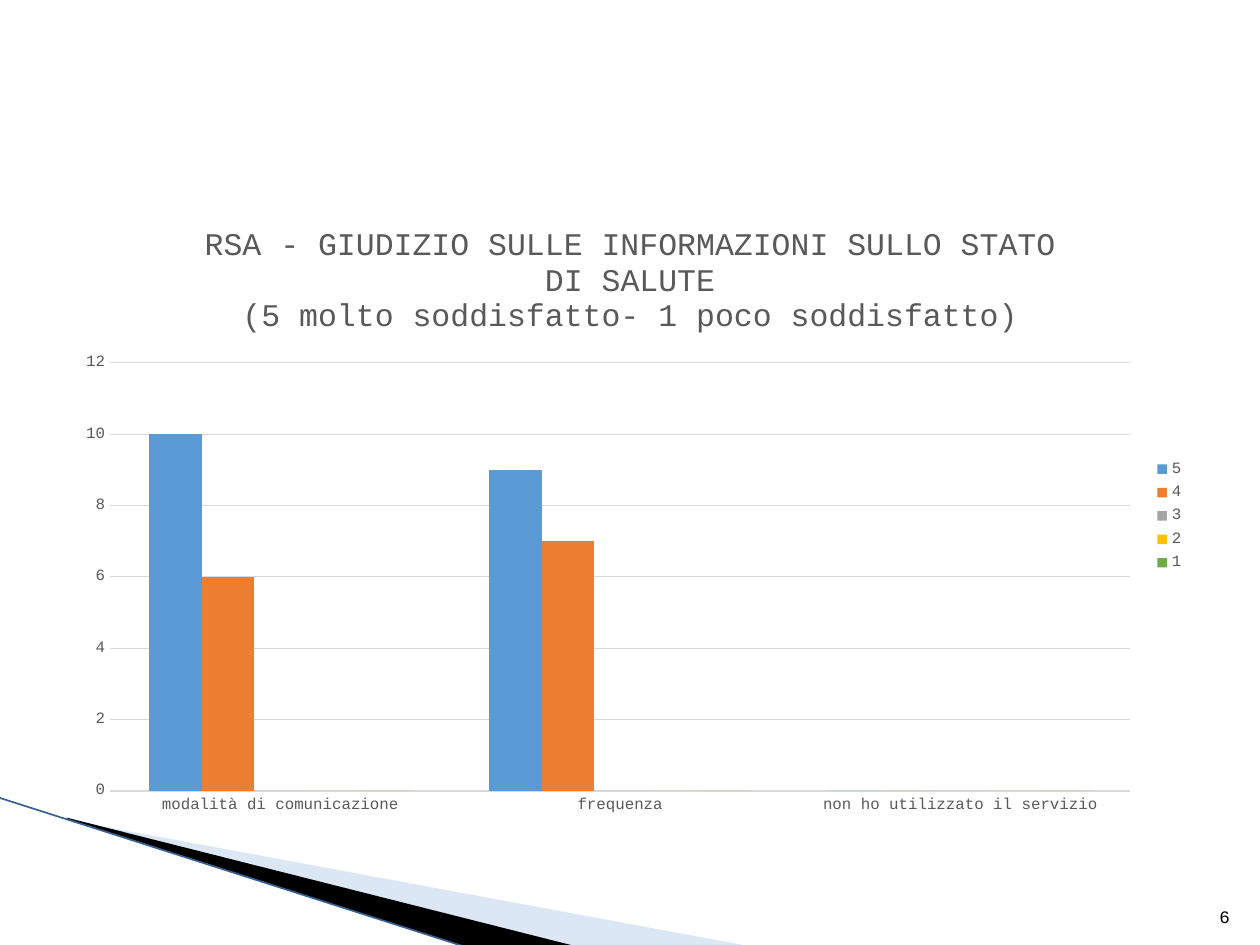
"""Build the slide with the satisfaction chart on health information."""
from dataclasses import dataclass

from lxml.etree import SubElement
from pptx import Presentation
from pptx.chart.data import CategoryChartData
from pptx.dml.color import RGBColor
from pptx.enum.chart import XL_CHART_TYPE, XL_LEGEND_POSITION, XL_TICK_MARK
from pptx.enum.shapes import MSO_CONNECTOR
from pptx.enum.text import MSO_ANCHOR, PP_ALIGN
from pptx.oxml import parse_xml
from pptx.oxml.ns import nsdecls, qn
from pptx.util import Inches, Pt

WIDTH, HEIGHT = 10, 7.5
FONT = "Courier New"
COLORS = {
    "pale": "A9C5E9", "black": "000000", "edge": "376092", "label": "595959", "grid": "D9D9D9",
    "5": "5B9BD5", "4": "ED7D31", "3": "A5A5A5", "2": "FFC000", "1": "70AD47",
}
CATEGORIES = ["modalità di comunicazione", "frequenza", "non ho utilizzato il servizio"]
RATINGS = {"5": (10, 9, 0), "4": (6, 7, 0), "3": (0, 0, 0), "2": (0, 0, 0), "1": (0, 0, 0)}
TITLE = [
    "RSA - GIUDIZIO SULLE INFORMAZIONI SULLO STATO DI SALUTE",
    "(5 molto soddisfatto- 1 poco soddisfatto)",
]
PLOT_PERCENTS = {"x": 4.15, "y": 25.45, "w": 89.95, "h": 68.65}


@dataclass
class Wedge:
    """A filled outline and its frame, in percentages of the slide."""
    frame: tuple[float, float, float, float]
    points: list[tuple[float, float]]
    color: str
    opacity: int = 100


WEDGES = [
    Wedge((7.8, 72.93, 41.6, 21.07),
          [(5.5, 86.8), (59.5, 100.13), (45.6, 100.13), (5.5, 86.67)], "pale", 40),
    Wedge((-0.6, 84.4, 41.6, 12.27),
          [(5.3, 86.53), (45.7, 100.13), (37.2, 100.27), (5.4, 86.67)], "black"),
]


def across(percent: float) -> int:
    """Turn a percentage of the slide width into a length."""
    return Inches(WIDTH * percent / 100)


def down(percent: float) -> int:
    """Turn a percentage of the slide height into a length."""
    return Inches(HEIGHT * percent / 100)


def rgb(name: str) -> RGBColor:
    """Look up a named colour."""
    return RGBColor.from_string(COLORS[name])


def set_font(font, size: float, color: str) -> None:
    """Apply the slide's typeface with a size and colour."""
    font.name, font.size, font.bold = FONT, Pt(size), False
    font.color.rgb = rgb(color)


def set_frame(shape, frame: tuple[float, float, float, float]) -> None:
    """Give a freeform a frame of its own while its outline stays in place."""
    left, top, width, height = frame
    shift_x, shift_y = shape.left - across(left), shape.top - down(top)
    shape.left, shape.top = across(left), down(top)
    shape.width, shape.height = across(width), down(height)
    for outline in shape._element.iter(qn("a:path")):
        outline.set("w", str(shape.width))
        outline.set("h", str(shape.height))
    for point in shape._element.iter(qn("a:pt")):
        point.set("x", str(int(point.get("x")) + shift_x))
        point.set("y", str(int(point.get("y")) + shift_y))


def draw_wedge(page, wedge: Wedge) -> None:
    """Draw one corner wedge."""
    start, *rest = [(across(x), down(y)) for x, y in wedge.points]
    builder = page.shapes.build_freeform(*start)
    builder.add_line_segments(rest, close=True)
    shape = builder.convert_to_shape()
    set_frame(shape, wedge.frame)
    shape.shadow.inherit = False
    shape.fill.solid()
    shape.fill.fore_color.rgb = rgb(wedge.color)
    shape.line.fill.background()
    if wedge.opacity < 100:
        color = shape.fill._xPr.find(qn("a:solidFill"))[0]
        SubElement(color, qn("a:alpha"), val=str(wedge.opacity * 1000))


def draw_edge(page) -> None:
    """Draw the thin line along the corner wedges."""
    edge = page.shapes.add_connector(
        MSO_CONNECTOR.STRAIGHT, across(-0.1), down(84.4), across(37.1), down(100.27))
    edge.line.color.rgb = rgb("edge")
    edge.line.width = Pt(0.95)
    SubElement(edge._element.spPr, qn("a:effectLst"))


def draw_page_number(page, number: str) -> None:
    """Write the page number in the lower right corner."""
    box = page.shapes.add_textbox(Inches(9.46), Inches(7.01), Inches(0.4), Inches(0.4))
    frame = box.text_frame
    frame.word_wrap = True
    frame.vertical_anchor = MSO_ANCHOR.BOTTOM
    para = frame.paragraphs[0]
    para.text = number
    para.alignment = PP_ALIGN.RIGHT
    set_font(para.font, 10, "black")


def style_axis(axis) -> None:
    """Hide an axis line and its ticks and style its labels."""
    axis.major_tick_mark = axis.minor_tick_mark = XL_TICK_MARK.NONE
    axis.format.line.fill.background()
    set_font(axis.tick_labels.font, 9, "label")


def place_plot(chart) -> None:
    """Fix the inner plot area as shares of the chart."""
    plot_area = chart._chartSpace.chart.plotArea
    for old in plot_area.findall(qn("c:layout")):
        plot_area.remove(old)
    modes = '<c:xMode val="edge"/><c:yMode val="edge"/>'
    shares = "".join(
        f'<c:{key} val="{percent / 100:.4f}"/>' for key, percent in PLOT_PERCENTS.items())
    plot_area.insert(0, parse_xml(
        f'<c:layout {nsdecls("c")}><c:manualLayout><c:layoutTarget val="inner"/>'
        f"{modes}{shares}</c:manualLayout></c:layout>"))


def draw_chart(page) -> None:
    """Draw the clustered columns of ratings."""
    data = CategoryChartData()
    data.categories = CATEGORIES
    for name, values in RATINGS.items():
        data.add_series(name, values)
    chart = page.shapes.add_chart(
        XL_CHART_TYPE.COLUMN_CLUSTERED, Inches(0.5), Inches(1.62), Inches(9), Inches(4.95), data).chart
    set_font(chart.font, 10, "black")
    chart.has_title = True
    title = chart.chart_title
    title.include_in_layout = False
    title.text_frame.text = "\n".join(TITLE)
    for para in title.text_frame.paragraphs:
        set_font(para.font, 18, "label")
    chart.has_legend = True
    chart.legend.position = XL_LEGEND_POSITION.RIGHT
    chart.legend.include_in_layout = False
    set_font(chart.legend.font, 9, "label")
    for axis in (chart.category_axis, chart.value_axis):
        style_axis(axis)
    scale = chart.value_axis
    scale.minimum_scale, scale.maximum_scale, scale.major_unit = 0, 12, 2
    scale.has_major_gridlines = True
    scale.major_gridlines.format.line.color.rgb = rgb("grid")
    scale.major_gridlines.format.line.width = Pt(0.75)
    plot = chart.plots[0]
    plot.gap_width, plot.overlap, plot.vary_by_categories = 150, 0, False
    for series in plot.series:
        series.format.fill.solid()
        series.format.fill.fore_color.rgb = rgb(series.name)
    place_plot(chart)


def main() -> None:
    """Assemble and save the deck."""
    deck = Presentation()
    deck.slide_width, deck.slide_height = Inches(WIDTH), Inches(HEIGHT)
    page = deck.slides.add_slide(deck.slide_layouts[6])
    for wedge in WEDGES:
        draw_wedge(page, wedge)
    draw_edge(page)
    draw_page_number(page, "6")
    draw_chart(page)
    deck.save("out.pptx")


if __name__ == "__main__":
    main()
